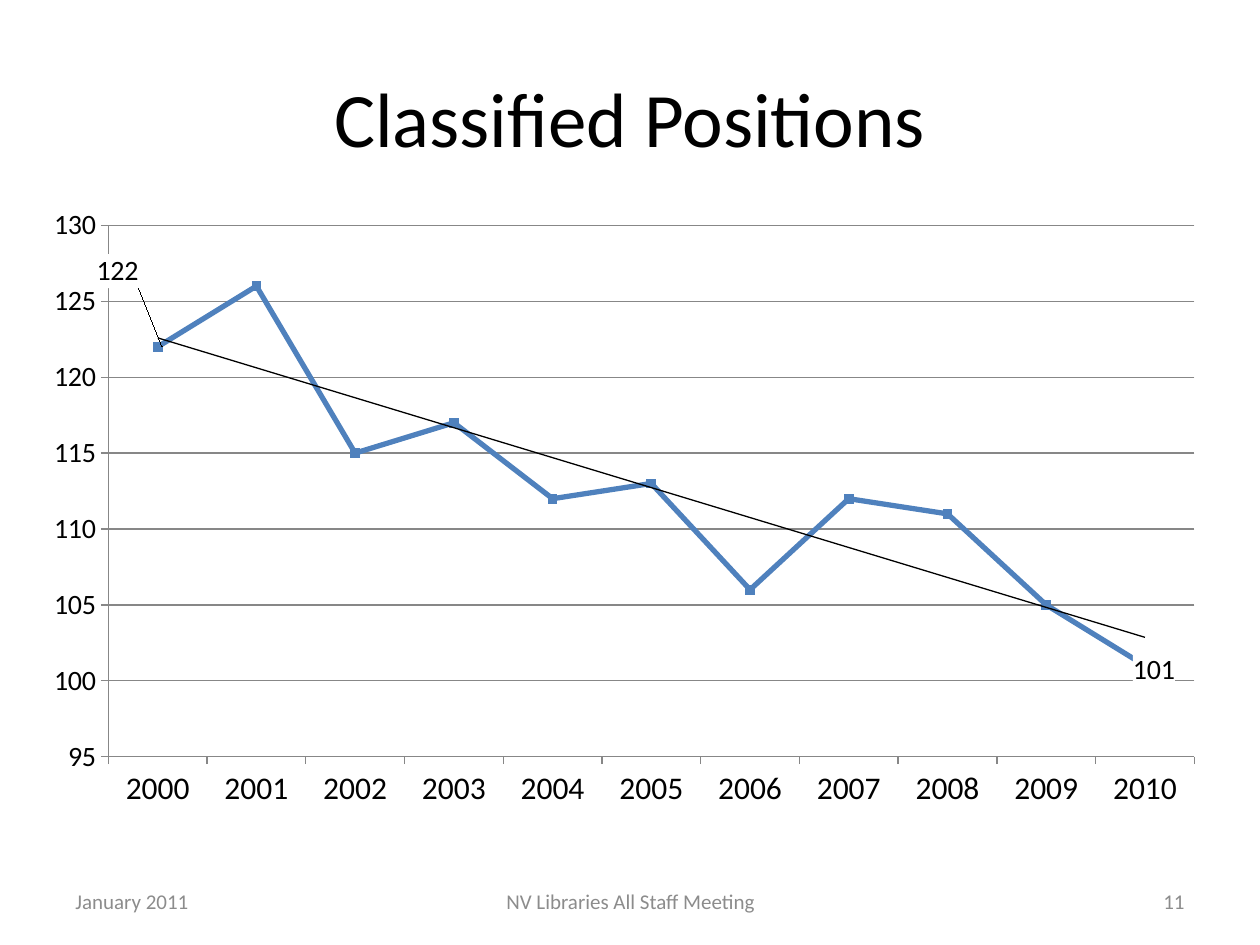
from lxml import etree
from pptx import Presentation
from pptx.chart.data import CategoryChartData
from pptx.dml.color import RGBColor
from pptx.enum.chart import XL_CHART_TYPE, XL_LABEL_POSITION, XL_MARKER_STYLE, XL_TICK_MARK
from pptx.enum.text import MSO_ANCHOR, PP_ALIGN
from pptx.oxml import parse_xml
from pptx.oxml.ns import nsdecls
from pptx.util import Inches, Pt

COLORS = {"text": "000000", "footer": "8C8C8C", "series": "4F81BD",
          "grid": "878787", "background": "FFFFFF"}
FONT = "Calibri"


def add_text(text, left, top, width, height, size, color, alignment):
    box = slide.shapes.add_textbox(Inches(left), Inches(top), Inches(width), Inches(height))
    frame = box.text_frame
    frame.word_wrap = True
    frame.vertical_anchor = MSO_ANCHOR.MIDDLE
    paragraph = frame.paragraphs[0]
    paragraph.text = text
    paragraph.alignment = alignment
    paragraph.font.name = FONT
    paragraph.font.size = Pt(size)
    paragraph.font.color.rgb = RGBColor.from_string(COLORS[color])


def manual_layout(**values):
    """Return a c:layout element; keyword order gives the child order."""
    children = "".join(f'<c:{name} val="{value}"/>' for name, value in values.items())
    return parse_xml(f'<c:layout {nsdecls("c")}><c:manualLayout>{children}'
                     '</c:manualLayout></c:layout>')


presentation = Presentation()
presentation.slide_width = Inches(10)
presentation.slide_height = Inches(7.5)
slide = presentation.slides.add_slide(presentation.slide_layouts[6])

add_text("Classified Positions", 0.5, 0.3, 9, 1.25, 44, "text", PP_ALIGN.CENTER)

# Line chart of positions per year
chart_data = CategoryChartData()
chart_data.categories = [str(year) for year in range(2000, 2011)]
chart_data.add_series("Series 1", (122, 126, 115, 117, 112, 113, 106, 112, 111, 105, 101))
chart = slide.shapes.add_chart(XL_CHART_TYPE.LINE_MARKERS, Inches(0), Inches(1.5),
                               Inches(10), Inches(5.67), chart_data).chart
chart.has_legend = False
chart.has_title = False
chart.font.name = FONT
chart.font.size = Pt(10)
chart.font.color.rgb = RGBColor.from_string(COLORS["text"])

plot_area = chart.plots[0]._element.getparent()
for old_layout in plot_area.xpath("./c:layout"):
    plot_area.remove(old_layout)
plot_area.insert(0, manual_layout(layoutTarget="inner", xMode="edge", yMode="edge",
                                  x=0.086, y=0.051, w=0.862, h=0.744))

value_axis = chart.value_axis
value_axis.minimum_scale = 95
value_axis.maximum_scale = 130
value_axis.major_unit = 5
value_axis.has_major_gridlines = True
for axis, size in ((chart.category_axis, 18), (value_axis, 16)):
    axis.major_tick_mark = XL_TICK_MARK.OUTSIDE
    axis.minor_tick_mark = XL_TICK_MARK.NONE
    axis.tick_labels.font.size = Pt(size)
for line in (chart.category_axis.format.line, value_axis.format.line,
             value_axis.major_gridlines.format.line):
    line.color.rgb = RGBColor.from_string(COLORS["grid"])
    line.width = Pt(0.75)

series_color = RGBColor.from_string(COLORS["series"])
chart.plots[0].vary_by_categories = False
series = chart.plots[0].series[0]
series.smooth = False
series.format.line.color.rgb = series_color
series.format.line.width = Pt(3)
series.marker.style = XL_MARKER_STYLE.SQUARE
series.marker.size = 5
series.marker.format.fill.solid()
series.marker.format.fill.fore_color.rgb = series_color
series.marker.format.line.color.rgb = series_color

# Labels on the first and last year, shifted from the right of the point
series.data_labels.show_value = False
for index, shift_x, shift_y in ((0, -0.056, -0.106), (10, -0.017, 0.007)):
    label = series.points[index].data_label
    label.font.size = Pt(16)
    label.position = XL_LABEL_POSITION.RIGHT
    label_xml = series._element.xpath(f'.//c:dLbl[c:idx/@val="{index}"]')[0]
    label_xml.insert(1, manual_layout(x=shift_x, y=shift_y))
    for old_fill in label_xml.xpath("./c:spPr"):
        label_xml.remove(old_fill)
    label_xml.insert(2, parse_xml(
        f'<c:spPr {nsdecls("c", "a")}><a:solidFill><a:srgbClr val="{COLORS["background"]}"/>'
        '</a:solidFill></c:spPr>'))

# Linear trend line
series._element.xpath("./c:dLbls")[0].addnext(parse_xml(
    f'<c:trendline {nsdecls("c", "a")}><c:spPr><a:ln w="{Pt(0.75)}"><a:solidFill>'
    f'<a:srgbClr val="{COLORS["text"]}"/></a:solidFill></a:ln></c:spPr>'
    '<c:trendlineType val="linear"/><c:dispRSqr val="0"/><c:dispEq val="0"/></c:trendline>'))

# Footer
for text, left, width, alignment in (
        ("January 2011", 0.5, 2.33, PP_ALIGN.LEFT),
        ("NV Libraries All Staff Meeting", 3.42, 3.17, PP_ALIGN.CENTER),
        ("11", 7.17, 2.33, PP_ALIGN.RIGHT)):
    add_text(text, left, 6.95, width, 0.4, 12, "footer", alignment)

presentation.save("out.pptx")
